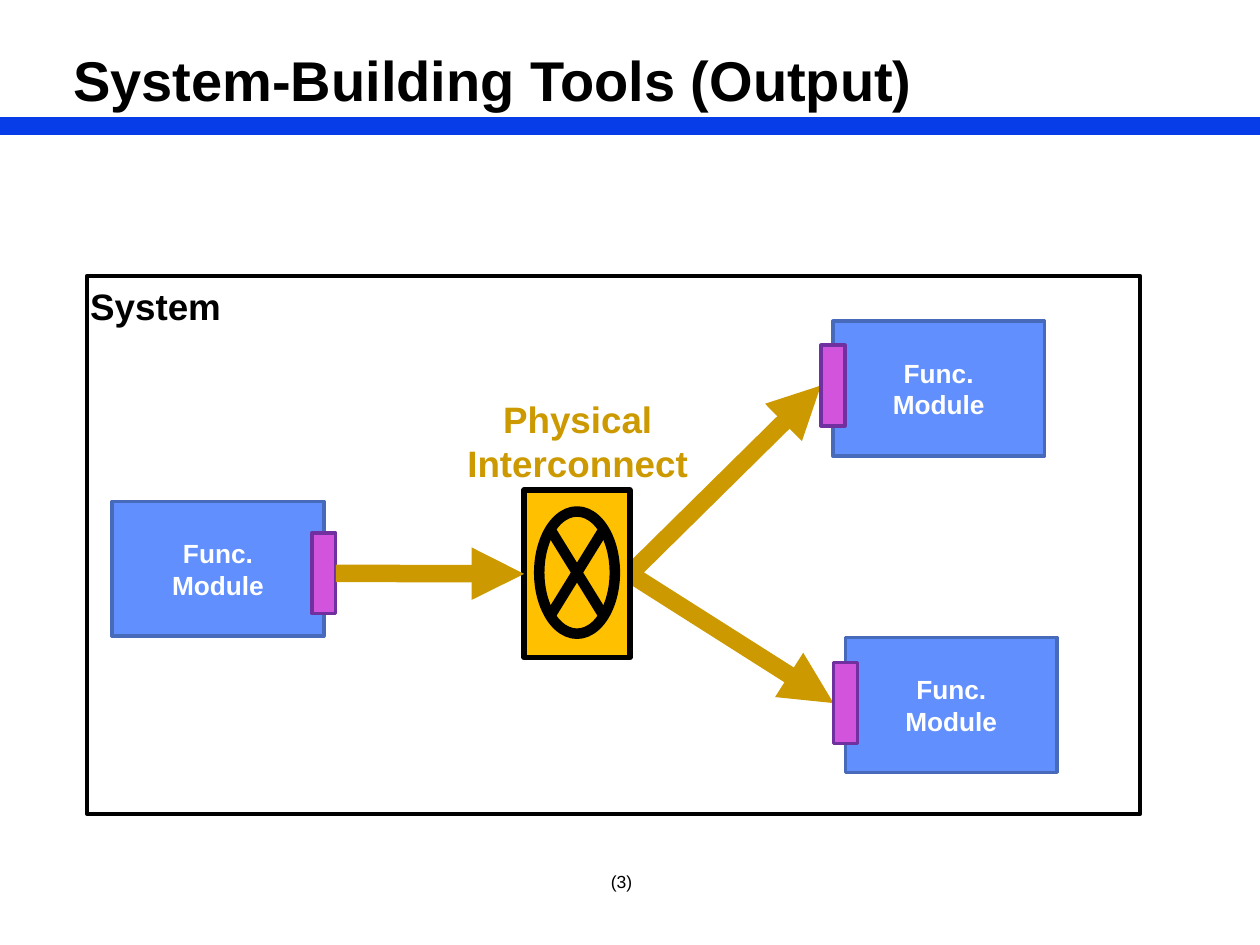
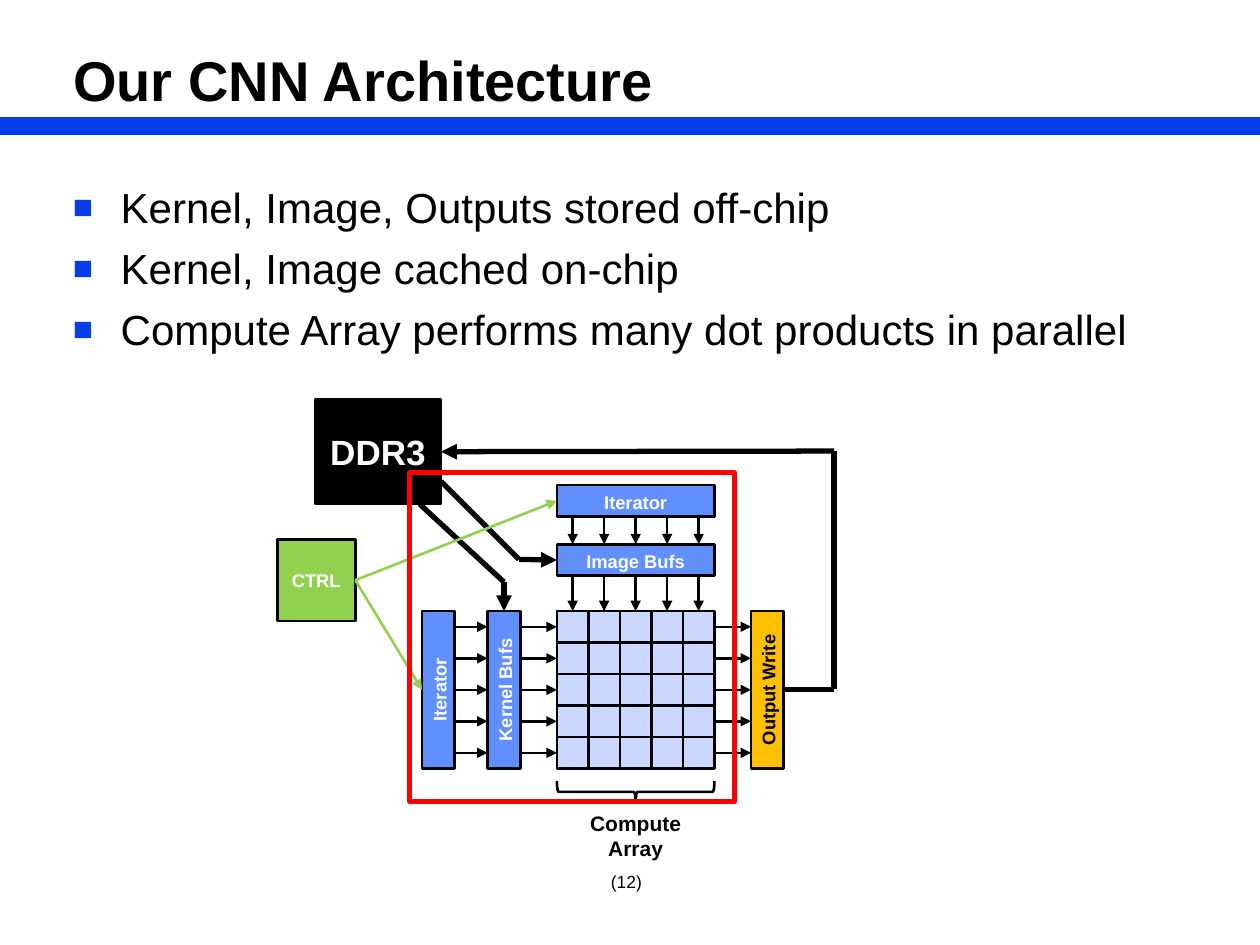
from dataclasses import dataclass
from typing import NamedTuple

from lxml import etree
from pptx import Presentation
from pptx.dml.color import RGBColor
from pptx.enum.shapes import MSO_CONNECTOR, MSO_SHAPE
from pptx.enum.text import MSO_ANCHOR, MSO_AUTO_SIZE, PP_ALIGN
from pptx.oxml.ns import qn
from pptx.util import Inches, Pt

STRAIGHT = MSO_CONNECTOR.STRAIGHT
RECTANGLE = MSO_SHAPE.RECTANGLE
SUMMING_JUNCTION = MSO_SHAPE.FLOWCHART_SUMMING_JUNCTION
LEFT_BRACE = MSO_SHAPE.LEFT_BRACE
ANCHOR_TOP, ANCHOR_MIDDLE = MSO_ANCHOR.TOP, MSO_ANCHOR.MIDDLE
ALIGN_LEFT, ALIGN_CENTER = PP_ALIGN.LEFT, PP_ALIGN.CENTER
NO_AUTOFIT = MSO_AUTO_SIZE.NONE
TOP, LEFT, BOTTOM, RIGHT = range(4)
TITLE_ONLY = 5


@dataclass(frozen=True)
class Theme:
    font: str = "Arial"
    black: str = "000000"
    white: str = "FFFFFF"
    band: str = "063DE8"
    module: str = "618FFD"
    module_edge: str = "486ABB"
    port: str = "D254DC"
    port_edge: str = "7030A0"
    wire: str = "CC9900"
    amber: str = "FFC000"
    cell: str = "CAD7FE"
    control: str = "92D050"
    chip: str = "FF0000"
    title_size: float = 32
    body_size: float = 24
    heading_size: float = 21
    memory_size: float = 20
    module_size: float = 15
    caption_size: float = 12
    block_size: float = 10.5
    number_size: float = 10
    heavy: float = 10
    bold_line: float = 3
    thin_line: float = 1.5


THEME = Theme()


class Box(NamedTuple):
    left: float
    top: float
    width: float
    height: float

    def inner(self, left, top, width, height):
        """Box whose left and top are measured from this box."""
        return Box(self.left + left, self.top + top, width, height)

    def point(self, x, y):
        return self.left + x, self.top + y

    def inches(self):
        return [Inches(length) for length in self]


class Joint(NamedTuple):
    shape: object
    side: int


def rgb(color):
    return RGBColor.from_string(color)


def write_text(shape, text, size, color=THEME.black, bold=True, align=ALIGN_CENTER,
               anchor=ANCHOR_MIDDLE, wrap=True):
    """Fill the shape with one paragraph for each line of text."""
    frame = shape.text_frame
    frame.auto_size = NO_AUTOFIT
    frame.word_wrap = wrap
    frame.vertical_anchor = anchor
    frame.text = text
    for paragraph in frame.paragraphs:
        paragraph.alignment = align
        font = paragraph.font
        font.name, font.size, font.bold = THEME.font, Pt(size), bold
        font.color.rgb = rgb(color)


def add_label(slide, box, text, size, **text_format):
    label = slide.shapes.add_textbox(*box.inches())
    write_text(label, text, size, **text_format)
    return label


def add_block(slide, box, fill=None, line=THEME.black, width=THEME.thin_line, kind=RECTANGLE):
    block = slide.shapes.add_shape(kind, *box.inches())
    block.shadow.inherit = False
    if fill:
        block.fill.solid()
        block.fill.fore_color.rgb = rgb(fill)
    else:
        block.fill.background()
    block.line.color.rgb = rgb(line)
    block.line.width = Pt(width)
    return block


def turn_upright(block_box):
    """Box that covers block_box after a turn of 270 degrees."""
    left, top, width, height = block_box
    shift = (height - width) / 2
    return Box(left - shift, top + shift, height, width)


def add_line(slide, start, end, color=THEME.black, width=THEME.thin_line, arrow=True):
    """Draw from start to end, each an (x, y) in inches or a Joint."""
    points = [(0, 0) if isinstance(place, Joint) else place for place in (start, end)]
    coordinates = [Inches(value) for point in points for value in point]
    connector = slide.shapes.add_connector(STRAIGHT, *coordinates)
    if isinstance(start, Joint):
        connector.begin_connect(*start)
    if isinstance(end, Joint):
        connector.end_connect(*end)
    connector.line.color.rgb = rgb(color)
    connector.line.width = Pt(width)
    properties = connector.element.spPr
    if arrow:
        etree.SubElement(properties.find(qn("a:ln")), qn("a:tailEnd"), type="triangle")
    etree.SubElement(properties, qn("a:effectLst"))
    return connector


def send_to_back(shapes, shape):
    shapes.element.insert(2, shape.element)


def add_titled_slide(presentation, title, number):
    slide = presentation.slides.add_slide(presentation.slide_layouts[TITLE_ONLY])
    heading = slide.shapes.title
    heading.left, heading.top, heading.width, heading.height = Box(0.48, 0, 9.04, 1.25).inches()
    write_text(heading, title, THEME.title_size, align=ALIGN_LEFT)
    add_label(slide, Box(4.75, 6.75, 0.5, 0.5), f"({number})", THEME.number_size,
              bold=False, align=ALIGN_LEFT, wrap=False)
    return slide


def add_layout_band(slide):
    """Draw the title band once, on the layout that all slides share."""
    band = add_line(slide, (0, 1), (10, 1), THEME.band, THEME.heavy, arrow=False)
    send_to_back(slide.slide_layout.shapes, band)


def add_bullets(slide, box, lines):
    body = add_label(slide, box, "\n".join(lines), THEME.body_size, bold=False,
                     align=ALIGN_LEFT, anchor=ANCHOR_TOP)
    for index, paragraph in enumerate(body.text_frame.paragraphs):
        properties = paragraph._p.get_or_add_pPr()
        properties.set("marL", str(Inches(0.38)))
        properties.set("indent", str(-Inches(0.38)))
        bullet = [
            etree.Element(qn("a:buClr")),
            etree.Element(qn("a:buSzPct"), val="80000"),
            etree.Element(qn("a:buFont"), typeface=THEME.font),
            etree.Element(qn("a:buChar"), char="■"),
        ]
        etree.SubElement(bullet[0], qn("a:srgbClr"), val=THEME.band)
        for position, element in enumerate(bullet):
            properties.insert(position, element)
        if index:
            paragraph.space_before = Pt(6)


def draw_module(slide, box, port_side, port_drop):
    """Draw a function module with a port astride one side; return the port."""
    module = add_block(slide, box, THEME.module, THEME.module_edge, 2)
    write_text(module, "Func.\nModule", THEME.module_size, color=THEME.white)
    port_width = 0.19
    edge = box.width if port_side == RIGHT else 0
    port_box = box.inner(edge - port_width / 2, port_drop, port_width, 0.64)
    return add_block(slide, port_box, THEME.port, THEME.port_edge, 2)


def draw_switch(slide, box):
    switch = add_block(slide, box, THEME.amber, width=3)
    add_block(slide, box.inner(0.12, 0.17, 0.6, 0.97), THEME.amber, width=6,
              kind=SUMMING_JUNCTION)
    add_label(slide, box.inner(-0.56, -0.79, 1.97, 0.81), "Physical\nInterconnect",
              THEME.heading_size, color=THEME.wire, anchor=ANCHOR_TOP, wrap=False)
    return switch


def draw_system(slide, box):
    add_block(slide, box, width=2.25)
    add_label(slide, box.inner(-0.08, 0.01, 1.25, 0.45), "System", THEME.heading_size,
              anchor=ANCHOR_TOP, wrap=False)
    module_size = (1.68, 1.07)
    source = draw_module(slide, box.inner(0.2, 1.79, *module_size), RIGHT, 0.25)
    targets = [
        draw_module(slide, box.inner(5.92, 0.36, *module_size), LEFT, 0.19),
        draw_module(slide, box.inner(6.02, 2.87, *module_size), LEFT, 0.2),
    ]
    switch = draw_switch(slide, box.inner(3.47, 1.7, 0.84, 1.33))
    add_line(slide, Joint(source, RIGHT), Joint(switch, LEFT), THEME.wire, THEME.heavy)
    for target in targets:
        wire = add_line(slide, Joint(switch, RIGHT), Joint(target, LEFT),
                        THEME.wire, THEME.heavy)
        send_to_back(slide.shapes, wire)


def draw_bar(slide, box, text, fill=THEME.module, color=THEME.white):
    """Draw a labelled bar; a tall one has its text turned upwards."""
    upright = box.height > box.width
    bar = add_block(slide, turn_upright(box) if upright else box, fill)
    bar.rotation = 270 if upright else 0
    write_text(bar, text, THEME.block_size, color=color, anchor=ANCHOR_TOP)
    return bar


def draw_compute_array(slide, box, count):
    """Draw a square grid of cells with its brace; return the rows of cells."""
    pitch = box.width / count
    rows = [[add_block(slide, box.inner(column * pitch, row * pitch, pitch, pitch), THEME.cell)
             for column in range(count)] for row in range(count)]
    brace_box = turn_upright(box.inner(0, box.height + 0.1, box.width, 0.17))
    brace = add_block(slide, brace_box, THEME.white, kind=LEFT_BRACE)
    brace.rotation = 270
    add_label(slide, box.inner(0.16, box.height + 0.28, 0.93, 0.5), "Compute\nArray",
              THEME.caption_size, anchor=ANCHOR_TOP, wrap=False)
    return rows


def draw_accelerator(slide, box):
    count, side, thickness = 5, 1.25, 0.25
    array_box = box.inner(2.22, 1.68, side, side)
    rows = draw_compute_array(slide, array_box, count)

    def bar_above(top, text):
        return draw_bar(slide, array_box.inner(0, top, side, thickness), text)

    def bar_beside(left, *text_and_colors):
        return draw_bar(slide, array_box.inner(left, 0, 0.26, side), *text_and_colors)

    iterator = bar_above(-1, "Iterator")
    image_buffers = bar_above(-0.53, "Image Bufs")
    bar_beside(-1.07, "Iterator")
    bar_beside(-0.55, "Kernel Bufs")
    bar_beside(1.54, "Output Write", THEME.amber, THEME.black)

    for index in range(count):
        center = (index + 0.5) * side / count
        middle = index == count // 2
        add_line(slide,
                 Joint(iterator, BOTTOM) if middle else array_box.point(center, -0.75),
                 Joint(image_buffers, TOP) if middle else array_box.point(center, -0.53))
        add_line(slide,
                 Joint(image_buffers, BOTTOM) if middle else array_box.point(center, -0.28),
                 Joint(rows[0][index], TOP))
        add_line(slide, array_box.point(-0.81, center), array_box.point(-0.55, center))
        add_line(slide, array_box.point(-0.29, center), Joint(rows[index][0], LEFT))
        add_line(slide, Joint(rows[index][-1], RIGHT), array_box.point(1.54, center))

    memory = add_block(slide, box.inner(0.3, 0, 1, 0.83), THEME.black)
    write_text(memory, "DDR3", THEME.memory_size, color=THEME.white)
    routes = [
        [box.point(1.3, 0.65), box.point(1.92, 1.27), Joint(image_buffers, LEFT)],
        [box.point(1.13, 0.83), box.point(1.8, 1.45), box.point(1.8, 1.68)],
        [box.point(4.02, 2.3), box.point(4.42, 2.3), box.point(4.42, 0.41),
         Joint(memory, RIGHT)],
    ]
    for route in routes:
        for start, end in zip(route, route[1:]):
            add_line(slide, start, end, width=THEME.bold_line, arrow=end is route[-1])

    control = add_block(slide, box.inner(0, 1.11, 0.62, 0.65), THEME.control)
    write_text(control, "CTRL", THEME.block_size, color=THEME.white)
    for target in (Joint(iterator, LEFT), array_box.point(-1.07, side / 2)):
        add_line(slide, Joint(control, RIGHT), target, THEME.control)

    add_block(slide, box.inner(1.05, 0.58, 2.58, 2.61), line=THEME.chip, width=THEME.bold_line)


def main():
    presentation = Presentation()
    presentation.slide_width, presentation.slide_height = Inches(10), Inches(7.5)

    tools = add_titled_slide(presentation, "System-Building Tools (Output)", 3)
    add_layout_band(tools)
    draw_system(tools, Box(0.69, 2.19, 8.36, 4.27))

    architecture = add_titled_slide(presentation, "Our CNN Architecture", 12)
    add_bullets(architecture, Box(0.48, 1.39, 9.04, 0.81), [
        "Kernel, Image, Outputs stored off-chip",
        "Kernel, Image cached on-chip",
        "Compute Array performs many dot products in parallel",
    ])
    draw_accelerator(architecture, Box(2.2, 3.17, 4.42, 3.71))

    presentation.save("out.pptx")


if __name__ == "__main__":
    main()
